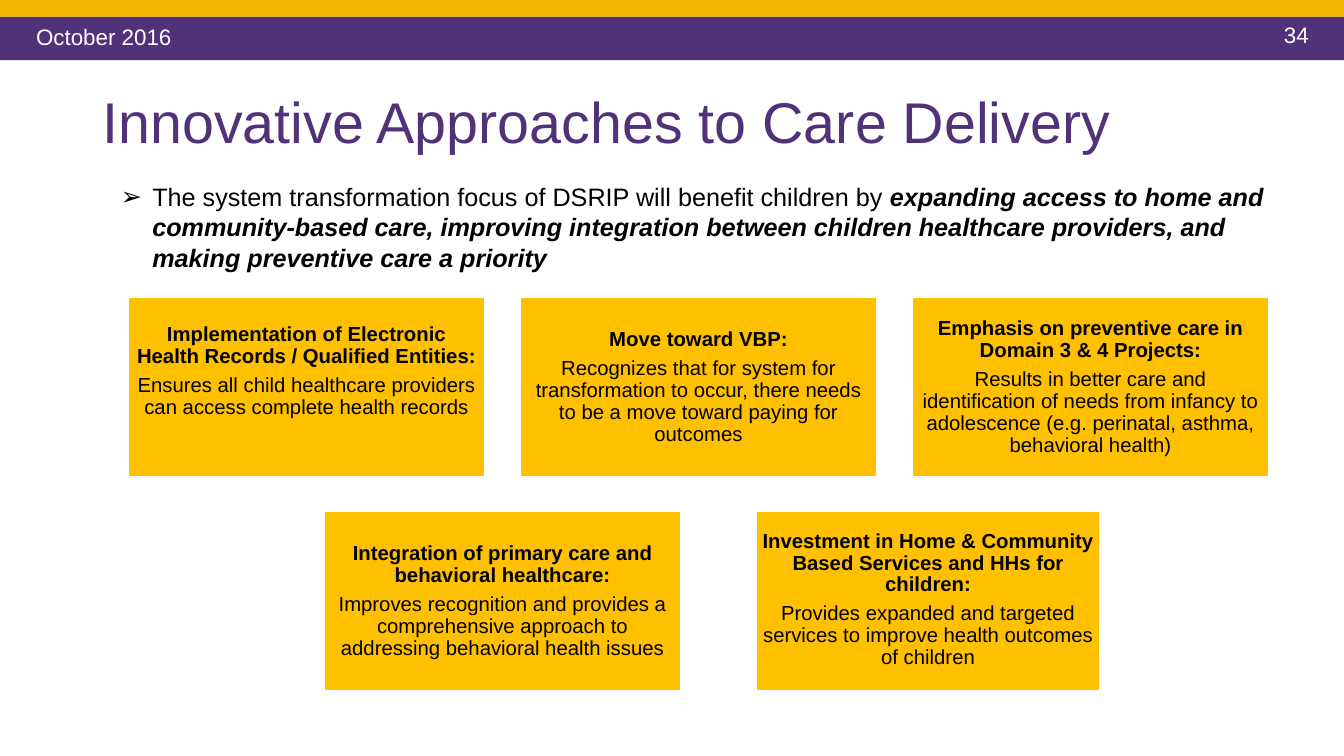
from lxml.etree import SubElement
from pptx import Presentation
from pptx.dml.color import RGBColor
from pptx.enum.shapes import MSO_SHAPE as Preset
from pptx.enum.text import MSO_ANCHOR as Anchor, PP_ALIGN as Align
from pptx.oxml.ns import qn
from pptx.util import Pt

COLORS = {"purple": "503278", "gold": "F2B800", "amber": "FFC000",
          "white": "FFFFFF", "black": "000000"}

# Card grid, in points
CARD_LEFT, CARD_PITCH, CARD_WIDTH, CARD_HEIGHT = 91.5, 280, 254.8, 128
ROW_TOPS = (212.5, 365.5)
CARD_INSET = 4

# Heading, detail, left, top, width, extra bottom inset
CARDS = [
    ("Implementation of Electronic Health Records / Qualified Entities:",
     "Ensures all child healthcare providers can access complete health records",
     CARD_LEFT, ROW_TOPS[0], CARD_WIDTH, 22),
    ("Move toward VBP:",
     "Recognizes that for system for transformation to occur, there needs "
     "to be a move toward paying for outcomes",
     CARD_LEFT + CARD_PITCH, ROW_TOPS[0], CARD_WIDTH, 0),
    ("Emphasis on preventive care in Domain 3 & 4 Projects:",
     "Results in better care and identification of needs from infancy to "
     "adolescence (e.g. perinatal, asthma, behavioral health)",
     CARD_LEFT + 2 * CARD_PITCH, ROW_TOPS[0], CARD_WIDTH, 0),
    ("Integration of primary care and behavioral healthcare:",
     "Improves recognition and provides a comprehensive approach to "
     "addressing behavioral health issues",
     CARD_LEFT + CARD_PITCH / 2, ROW_TOPS[1], CARD_WIDTH, 0),
    ("Investment in Home & Community Based Services and HHs for children:",
     "Provides expanded and targeted services to improve health outcomes of children",
     540, ROW_TOPS[1], 245.8, 2),
]


def color(name):
    return RGBColor.from_string(COLORS[name])


def add_span(para, text, size, ink, bold=False, italic=False):
    span = para.add_run()
    span.text = text
    font = span.font
    font.name, font.size = "Arial", Pt(size)
    font.bold, font.italic = bold, italic
    font.color.rgb = color(ink)


def add_rectangle(page, left, top, width, height, fill, line=None):
    box = page.shapes.add_shape(Preset.RECTANGLE, Pt(left), Pt(top), Pt(width), Pt(height))
    box.shadow.inherit = False
    box.fill.solid()
    box.fill.fore_color.rgb = color(fill)
    if line:
        box.line.color.rgb = color(line)
        box.line.width = Pt(1)
    else:
        box.line.fill.background()
    return box


def add_text_box(page, left, top, width, height):
    box = page.shapes.add_textbox(Pt(left), Pt(top), Pt(width), Pt(height))
    box.text_frame.word_wrap = True
    return box.text_frame


def add_bullet(para, mark, indent):
    props = para._p.get_or_add_pPr()
    props.set("marL", str(Pt(indent)))
    props.set("indent", str(-Pt(indent)))
    SubElement(props, qn("a:buFont")).set("typeface", "Arial")
    SubElement(props, qn("a:buChar")).set("char", mark)


def add_header(page):
    add_rectangle(page, 0, 12, 960, 31, "purple")
    add_rectangle(page, 0, 0, 960, 12, "gold")
    number = add_text_box(page, 910, 11.5, 34.6, 26.6)
    add_span(number.paragraphs[0], "34", 16, "white")
    date = add_text_box(page, 18.7, 11.5, 432, 29)
    date.margin_top = date.margin_bottom = 0
    date.vertical_anchor = Anchor.MIDDLE
    add_span(date.paragraphs[0], "October 2016", 16, "white")


def set_title(page, text):
    title = page.shapes.title
    title.left, title.top, title.width, title.height = Pt(66), Pt(52), Pt(877), Pt(74)
    title.text_frame.vertical_anchor = Anchor.MIDDLE
    para = title.text_frame.paragraphs[0]
    para.alignment, para.line_spacing = Align.LEFT, 0.9
    add_span(para, text, 41, "purple")


def add_intro(page):
    para = add_text_box(page, 79.2, 126, 835, 72.7).paragraphs[0]
    add_bullet(para, "➢", 22.5)
    add_span(para, "The system transformation focus of DSRIP will benefit children by ",
             18, "black")
    add_span(para, "expanding access to home and community-based care, improving "
             "integration between children healthcare providers, and making "
             "preventive care a priority", 18, "black", bold=True, italic=True)


def add_card(page, heading, detail, left, top, width, extra):
    frame = add_rectangle(page, left, top, width, CARD_HEIGHT, "amber", "white").text_frame
    frame.word_wrap = True
    frame.vertical_anchor = Anchor.MIDDLE
    frame.margin_left = frame.margin_right = frame.margin_top = Pt(CARD_INSET)
    frame.margin_bottom = Pt(CARD_INSET + extra)
    for para, text, bold in ((frame.paragraphs[0], heading, True),
                             (frame.add_paragraph(), detail, False)):
        para.alignment, para.line_spacing = Align.CENTER, 0.9
        para.space_after = Pt(5)
        add_span(para, text, 14.5, "black", bold)


def main():
    deck = Presentation()
    deck.slide_width, deck.slide_height = Pt(960), Pt(540)
    page = deck.slides.add_slide(deck.slide_layouts[5])
    add_header(page)
    set_title(page, "Innovative Approaches to Care Delivery")
    add_intro(page)
    for card in CARDS:
        add_card(page, *card)
    deck.save("out.pptx")


if __name__ == "__main__":
    main()
